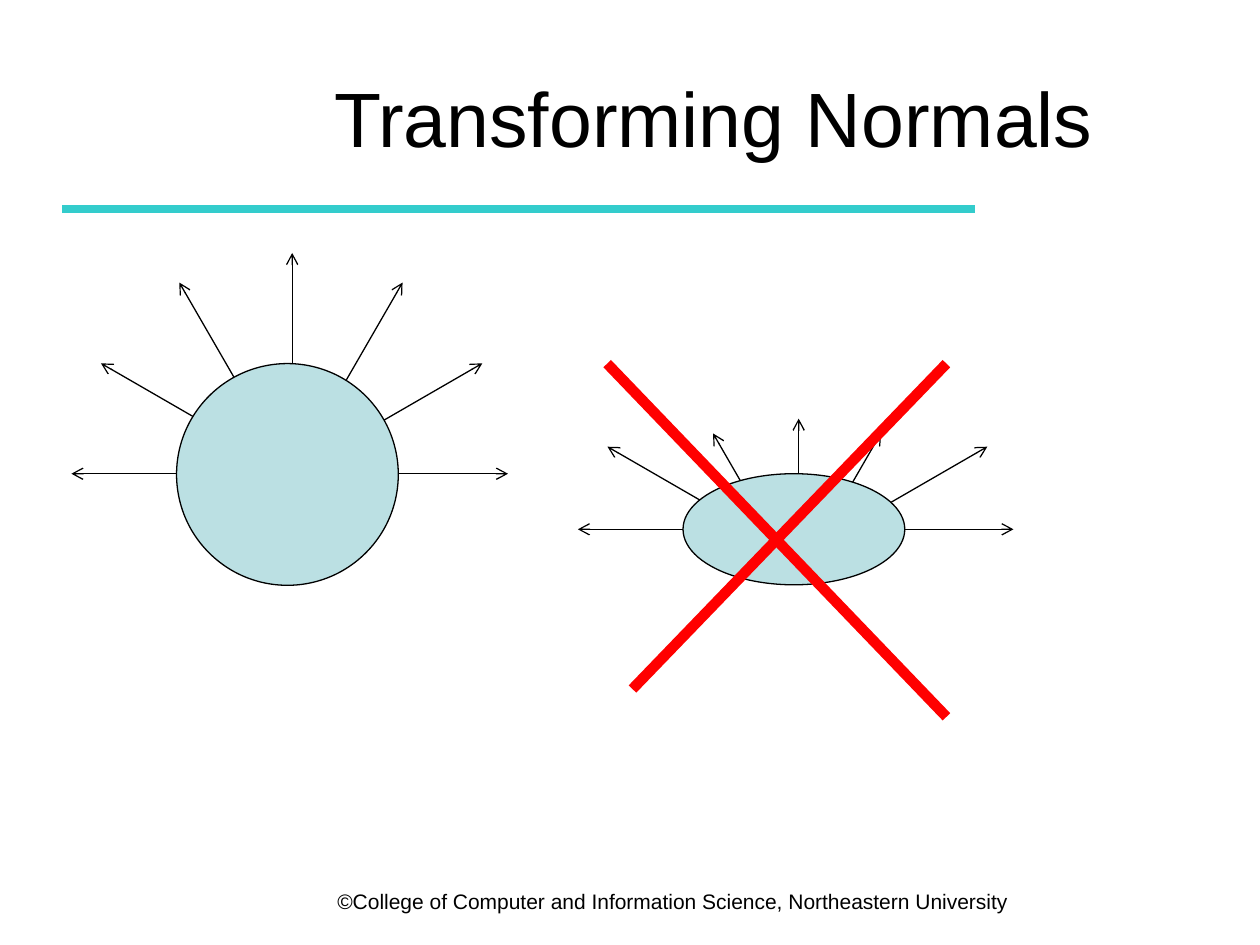
import math
import pptx
import pptx.util
import pptx.dml.color
import pptx.enum.shapes
import pptx.enum.text
import pptx.oxml
import pptx.oxml.ns
from pptx.util import Cm

BLACK, TEAL, PALE, RED = "000000", "33CCCC", "BBE0E3", "FF0000"


def color(code):
    return pptx.dml.color.RGBColor.from_string(code)


def add_tag(parent, name, **attrs):
    """Append an empty DrawingML element to parent."""
    tag = pptx.oxml.parse_xml(f"<a:{name} {pptx.oxml.ns.nsdecls('a')}/>")
    for key, value in attrs.items():
        tag.set(key, value)
    parent.append(tag)


class Pen:
    """Holds the style and the current slide."""

    font = "Arial"
    thin = 0.75

    def __init__(self, slide):
        self.slide = slide

    def text(self, words, left, top, width, height, size, align, anchor):
        box = self.slide.shapes.add_textbox(Cm(left), Cm(top), Cm(width), Cm(height))
        frame = box.text_frame
        frame.word_wrap = True
        frame.vertical_anchor = anchor
        frame.text = words
        para = frame.paragraphs[0]
        para.alignment = align
        font = para.runs[0].font
        font.name, font.size = self.font, pptx.util.Pt(size)
        font.color.rgb = color(BLACK)

    def line(self, shapes, start, end, code=BLACK, width=thin, arrow=False):
        kind = pptx.enum.shapes.MSO_CONNECTOR.STRAIGHT
        link = shapes.add_connector(kind, *(Cm(v) for v in (*start, *end)))
        link.line.color.rgb = color(code)
        link.line.width = pptx.util.Pt(width)
        if arrow:
            add_tag(link.line._get_or_add_ln(), "tailEnd", type="arrow")
        add_tag(link._element.spPr, "effectLst")

    def oval(self, shapes, left, top, width, height):
        kind = pptx.enum.shapes.MSO_SHAPE.OVAL
        oval = shapes.add_shape(kind, Cm(left), Cm(top), Cm(width), Cm(height))
        oval.shadow.inherit = False
        oval.fill.solid()
        oval.fill.fore_color.rgb = color(PALE)
        oval.line.color.rgb = color(BLACK)
        oval.line.width = pptx.util.Pt(self.thin)

    def normals(self, rays, oval):
        """Draw arrows 30 degrees apart, given as (x, y, length), under an oval."""
        shapes = self.slide.shapes.add_group_shape().shapes
        for step, (x, y, size) in enumerate(rays):
            angle = math.radians(30 * step)
            end = x + size * math.cos(angle), y - size * math.sin(angle)
            self.line(shapes, (x, y), end, arrow=True)
        self.oval(shapes, *oval)

    def cross(self, *strokes):
        shapes = self.slide.shapes.add_group_shape().shapes
        for start, end in strokes:
            self.line(shapes, start, end, RED, 6)


def main():
    deck = pptx.Presentation()
    deck.slide_width, deck.slide_height = Cm(25.4), Cm(19.05)
    pen = Pen(deck.slides.add_slide(deck.slide_layouts[6]))
    align, anchor = pptx.enum.text.PP_ALIGN, pptx.enum.text.MSO_ANCHOR

    pen.text("©College of Computer and Information Science, Northeastern University",
             6.55, 17.78, 14.38, 0.76, 12, align.LEFT, anchor.TOP)
    pen.line(pen.slide.shapes, (1.25, 4.22), (19.66, 4.22), TEAL, 4.5)
    pen.text("Transforming Normals", 4.65, 0.76, 19.48, 3.18, 44,
             align.CENTER, anchor.MIDDLE)

    long, short = 4.45, 2.23
    mid = 9.55
    pen.normals([(x, mid, long) for x in (5.79, 5.87, 5.89, 5.89, 5.84, 5.89, 5.89)],
                (3.56, 7.33, 4.47, 4.47))
    mid, low = 10.67, 11.23
    pen.normals([(15.98, mid, long), (16.05, low, long), (16.64, mid, short),
                 (16.1, mid, short), (15.49, mid, short), (16.1, low, long),
                 (16.1, mid, long)],
                (13.77, 9.55, 4.47, 2.24))
    pen.cross(((12.24, 7.33), (19.08, 14.45)), ((19.08, 7.33), (12.75, 13.89)))

    deck.save("out.pptx")


if __name__ == "__main__":
    main()
